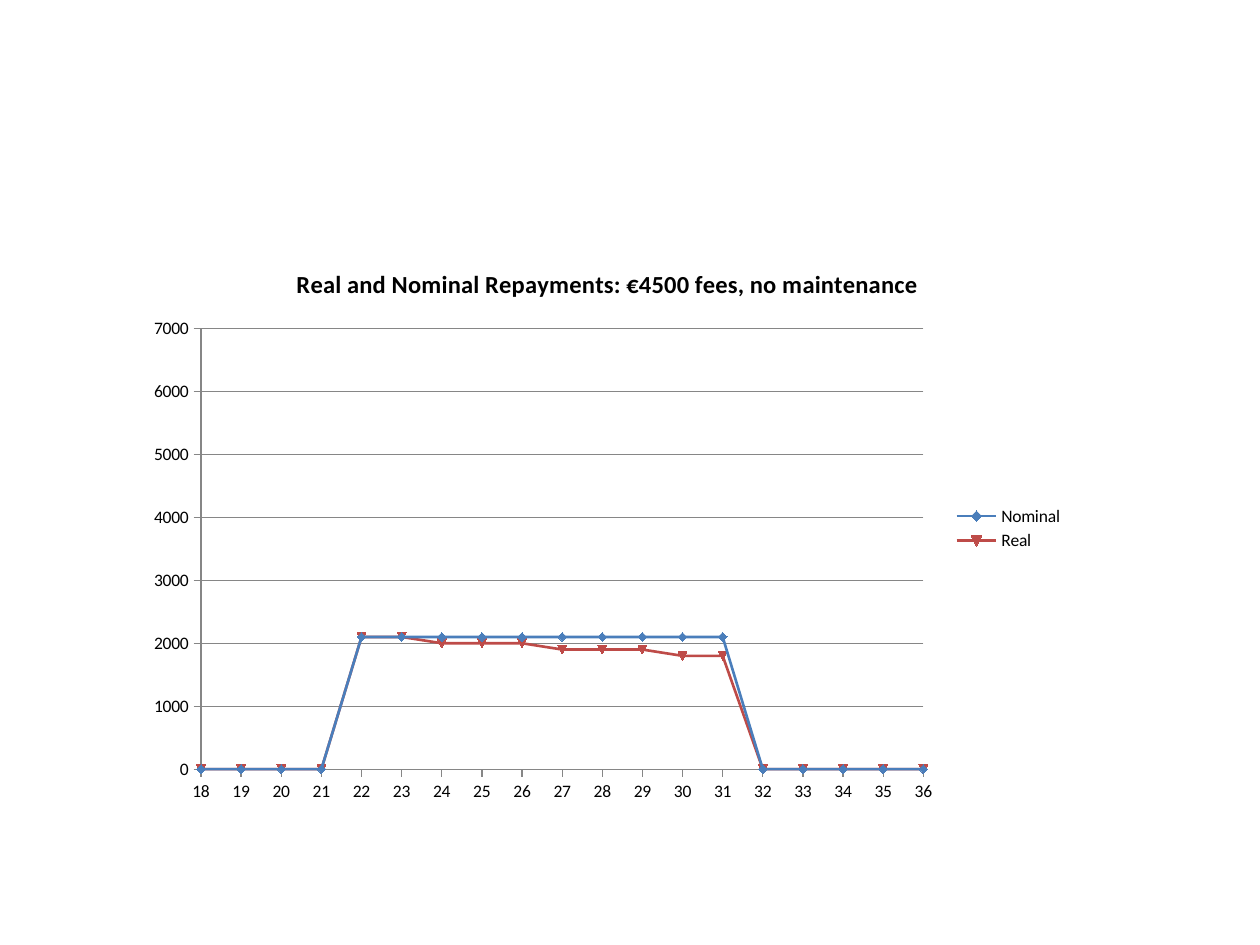
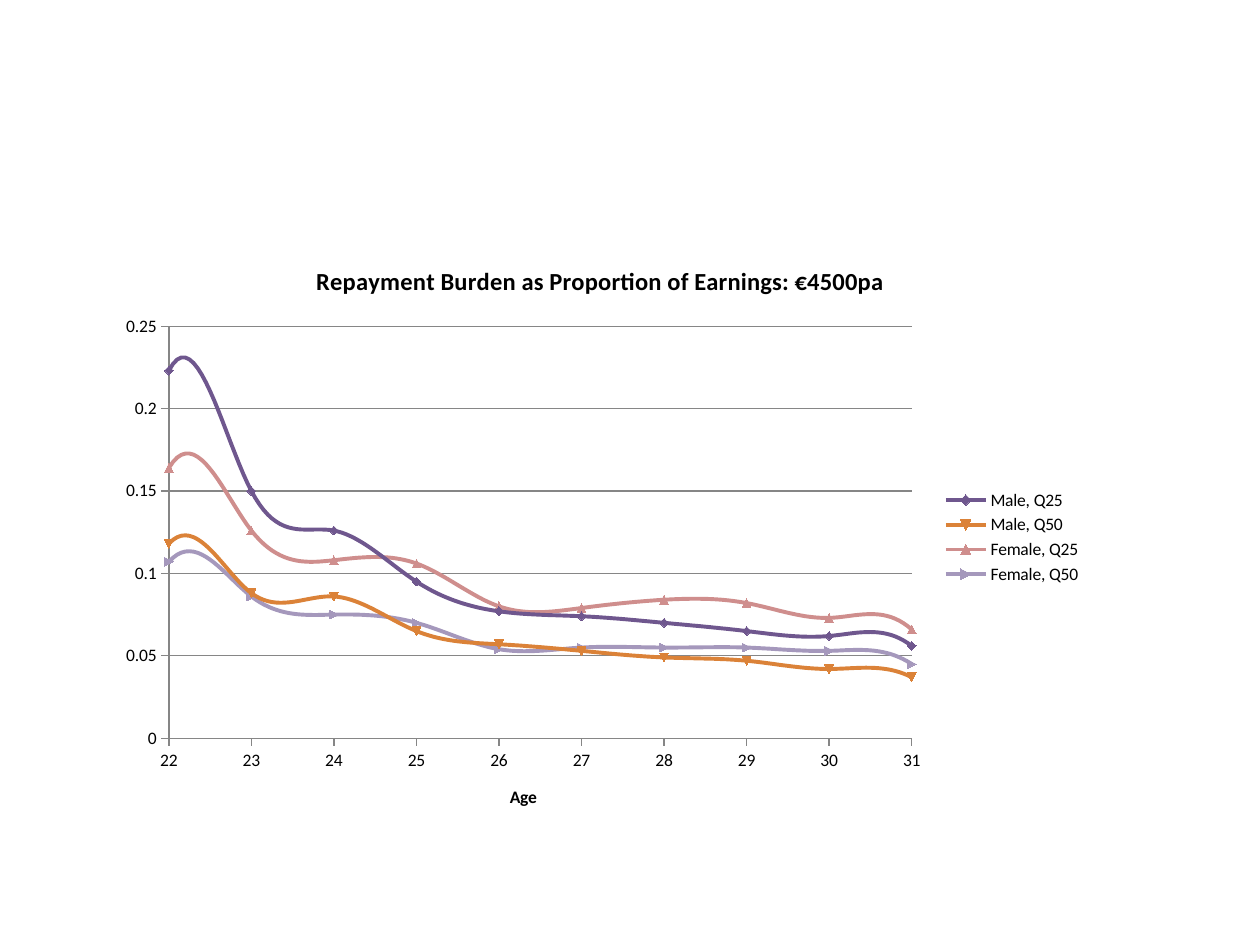
from pptx import Presentation
from pptx.chart.data import XyChartData as XyData
from pptx.dml.color import RGBColor
from pptx.enum.chart import XL_CHART_TYPE as Kind
from pptx.enum.chart import XL_LEGEND_POSITION as Side
from pptx.enum.chart import XL_TICK_MARK as Tick
from pptx.util import Pt

BLACK = RGBColor(0x00, 0x00, 0x00)
GRAY = RGBColor(0x86, 0x86, 0x86)
BLUE = RGBColor(0x4A, 0x7E, 0xBB)
RED = RGBColor(0xBE, 0x4B, 0x48)
PURPLE = RGBColor(0x6F, 0x57, 0x8E)
ORANGE = RGBColor(0xDB, 0x82, 0x38)
PINK = RGBColor(0xCF, 0x8E, 0x8D)
LILAC = RGBColor(0xA5, 0x98, 0xBC)

AGES = range(18, 37)
BEFORE, AFTER = [0] * 4, [0] * 5

LOANS = [
    ("Nominal ", BLUE, [2100] * 10),
    ("Real", RED, [2100] * 2 + [2000] * 3 + [1900] * 3 + [1800] * 2),
]
BURDENS = [
    ("Male, Q25", PURPLE,
     [0.223, 0.15, 0.126, 0.095, 0.077, 0.074, 0.07, 0.065, 0.062, 0.056]),
    ("Male, Q50", ORANGE,
     [0.118, 0.088, 0.086, 0.065, 0.057, 0.053, 0.049, 0.047, 0.042, 0.037]),
    ("Female, Q25", PINK,
     [0.164, 0.126, 0.108, 0.106, 0.08, 0.079, 0.084, 0.082, 0.073, 0.066]),
    ("Female, Q50", LILAC,
     [0.107, 0.086, 0.075, 0.07, 0.054, 0.055, 0.055, 0.055, 0.053, 0.045]),
]


class Deck:
    """Holds the chart style and the current slide."""

    face, small, large = "Calibri", 10, 14

    def __init__(self):
        self.file = Presentation()
        self.file.slide_width, self.file.slide_height = Pt(720), Pt(540)
        self.slide = None

    def page(self):
        self.slide = self.file.slides.add_slide(self.file.slide_layouts[6])

    def font(self, font, size, bold=False):
        font.name, font.size, font.bold = self.face, Pt(size), bold
        font.color.rgb = BLACK

    def title(self, title, text, size):
        frame = title.text_frame
        frame.text = text
        self.font(frame.paragraphs[0].runs[0].font, size, True)

    def stroke(self, line, color, width):
        line.color.rgb, line.width = color, Pt(width)

    def axis(self, axis, low=None, high=None, step=None, grid=False):
        axis.minimum_scale, axis.maximum_scale = low, high
        if step:
            axis.major_unit = step
        axis.has_major_gridlines = grid
        if grid:
            self.stroke(axis.major_gridlines.format.line, GRAY, 0.75)
        axis.major_tick_mark, axis.minor_tick_mark = Tick.OUTSIDE, Tick.NONE
        axis.tick_labels.number_format = "General"
        axis.tick_labels.number_format_is_linked = False
        self.font(axis.tick_labels.font, self.small)
        self.stroke(axis.format.line, GRAY, 0.75)

    def chart(self, kind, box, title, rows, width):
        data = XyData()
        for name, _, paid in rows:
            series = data.add_series(name)
            for age, value in zip(AGES, BEFORE + paid + AFTER):
                series.add_data_point(age, value)
        frame = self.slide.shapes.add_chart(kind, *map(Pt, box), data)
        chart = frame.chart
        self.font(chart.font, self.small)
        self.title(chart.chart_title, title, self.large)
        chart.chart_title.include_in_layout = False
        chart.has_legend = True
        chart.legend.position = Side.RIGHT
        chart.legend.include_in_layout = False
        self.font(chart.legend.font, self.small)
        plot = chart.plots[0]
        plot.vary_by_categories = False
        for series, (_, color, _) in zip(plot.series, rows):
            self.stroke(series.format.line, color, width)
            fill = series.marker.format.fill
            fill.solid()
            fill.fore_color.rgb = color
            self.stroke(series.marker.format.line, color, 0.75)
            smooth = series._element.get_or_add_smooth()
            smooth.val = kind == Kind.XY_SCATTER_SMOOTH
        return chart


def main():
    deck = Deck()

    deck.page()
    chart = deck.chart(Kind.XY_SCATTER_LINES, (77.2, 139.7, 540, 324.7),
                       "Real and Nominal Repayments: €4500 fees, no maintenance",
                       LOANS, 1.5)
    deck.axis(chart.category_axis, 18, 36, 1)
    deck.axis(chart.value_axis, high=7000, grid=True)

    deck.page()
    chart = deck.chart(Kind.XY_SCATTER_SMOOTH, (60.8, 137.8, 564.5, 338.4),
                       "Repayment Burden as Proportion of Earnings: €4500pa",
                       BURDENS, 2.25)
    deck.axis(chart.category_axis, 22, 31, 1)
    deck.title(chart.category_axis.axis_title, "Age", deck.small)
    deck.axis(chart.value_axis, low=0, grid=True)

    deck.file.save("out.pptx")


if __name__ == "__main__":
    main()
